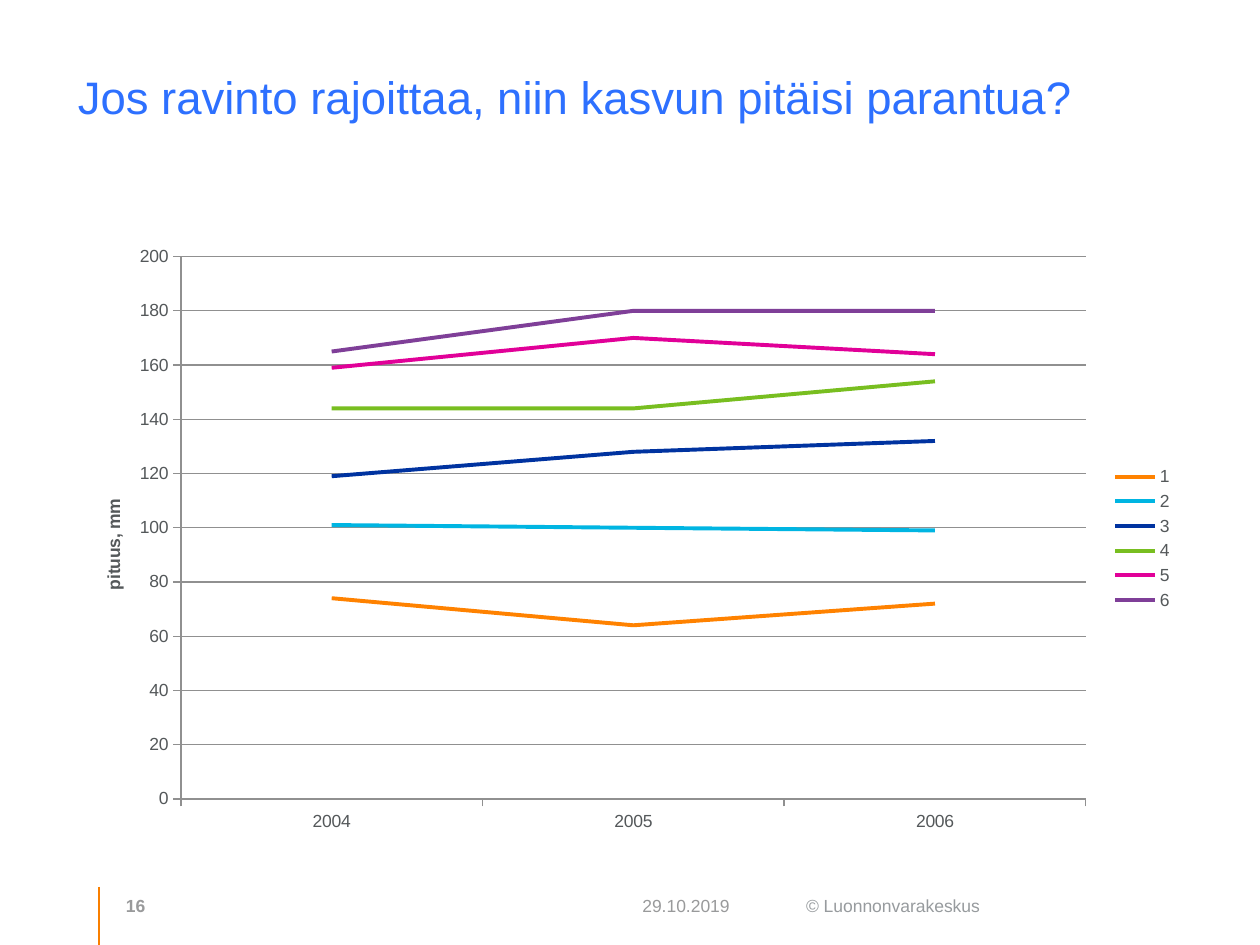
from lxml.etree import SubElement as Sub
from pptx import Presentation
from pptx.chart.data import CategoryChartData as ChartData
from pptx.dml.color import RGBColor as RGB
from pptx.enum.chart import XL_CHART_TYPE as Kind, XL_LEGEND_POSITION as Side
from pptx.enum.chart import XL_TICK_MARK as Tick
from pptx.enum.shapes import MSO_CONNECTOR as Conn
from pptx.enum.text import MSO_ANCHOR as Anchor
from pptx.oxml import parse_xml
from pptx.oxml.ns import nsdecls, qn
from pptx.util import Cm, Pt

BLUE = RGB(0x2D, 0x70, 0xFF)
ORANGE = RGB(0xF9, 0x7F, 0x00)
GREY = RGB(0x99, 0x9A, 0x9B)
PALE = RGB(0x97, 0x9B, 0x9E)
DARK = RGB(0x54, 0x58, 0x5A)
RULE = RGB(0x90, 0x90, 0x90)

# Content: text, box in cm, top inset in cm, anchor, font
TEXTS = [
    ("Jos ravinto rajoittaa, niin kasvun pitäisi parantua?",
     (1.32, 1.19, 22.58, 2.9), 0.2, Anchor.TOP, dict(size=Pt(26), color=BLUE)),
    ("16", (2.29, 17.83, 1.24, 0.76), 0.13, Anchor.BOTTOM,
     dict(size=Pt(10), color=GREY, bold=True)),
    ("29.10.2019", (12.7, 17.83, 3.12, 0.76), 0.13, Anchor.BOTTOM,
     dict(size=Pt(10), color=GREY)),
    ("© Luonnonvarakeskus", (16, 17.91, 4.93, 0.69), 0.13, Anchor.TOP,
     dict(size=Pt(10), color=PALE)),
]
YEARS = ["2004", "2005", "2006"]
LENGTHS = [
    ("1", (74, 64, 72), RGB(0xFF, 0x82, 0x00)),
    ("2", (101, 100, 99), RGB(0x00, 0xB5, 0xE2)),
    ("3", (119, 128, 132), RGB(0x00, 0x33, 0xA0)),
    ("4", (144, 144, 154), RGB(0x78, 0xBE, 0x20)),
    ("5", (159, 170, 164), RGB(0xE1, 0x00, 0x98)),
    ("6", (165, 180, 180), RGB(0x7F, 0x3F, 0x98)),
]


def style(font, color, **attrs):
    font.name = "Arial"
    font.color.rgb = color
    for name, value in attrs.items():
        setattr(font, name, value)


def stroke(line, color, width):
    line.color.rgb = color
    line.width = Pt(width)


def place(part, index, **spots):
    """Give a chart part a manual layout, in shares of the chart."""
    for old in part.findall(qn("c:layout")):
        part.remove(old)
    layout = parse_xml(f"<c:layout {nsdecls('c')}><c:manualLayout/></c:layout>")
    for tag, value in spots.items():
        Sub(layout[0], qn("c:" + tag)).set("val", str(value))
    part.insert(index, layout)


deck = Presentation()
deck.slide_width, deck.slide_height = Cm(25.4), Cm(19.05)
slide = deck.slides.add_slide(deck.slide_layouts[6])
shapes = slide.shapes

# Title and footer
for text, box, top, anchor, font in TEXTS:
    frame = shapes.add_textbox(*map(Cm, box)).text_frame
    frame.word_wrap = True
    frame.margin_top = Cm(top)
    frame.vertical_anchor = anchor
    run = frame.paragraphs[0].add_run()
    run.text = text
    style(run.font, **font)

mark = shapes.add_connector(Conn.STRAIGHT, Cm(2), Cm(17.88), Cm(2), Cm(19.05))
stroke(mark.line, ORANGE, 1)
Sub(mark._element.spPr, qn("a:effectLst"))

# Line chart
data = ChartData()
data.categories = YEARS
for name, values, _ in LENGTHS:
    data.add_series(name, values)
chart = shapes.add_chart(Kind.LINE, Cm(1.32), Cm(4.72), Cm(22.58), Cm(12.27),
                         data).chart
style(chart.font, DARK, size=Pt(10))
chart.has_title = False
chart.has_legend = True
chart.legend.position = Side.RIGHT
chart.legend.include_in_layout = False
chart.plots[0].vary_by_categories = False
for line, (_, _, color) in zip(chart.plots[0].series, LENGTHS):
    line.smooth = False
    stroke(line.format.line, color, 2.25)

# Axes
years, mm = chart.category_axis, chart.value_axis
for axis in (years, mm):
    axis.major_tick_mark = Tick.OUTSIDE
    axis.minor_tick_mark = Tick.NONE
    stroke(axis.format.line, RULE, 0.75)
mm.minimum_scale, mm.maximum_scale, mm.major_unit = 0, 200, 20
mm.has_major_gridlines = True
stroke(mm.major_gridlines.format.line, RULE, 0.75)
run = mm.axis_title.text_frame.paragraphs[0].add_run()
run.text = "pituus, mm"
style(run.font, DARK, size=Pt(10), bold=True)

place(mm.axis_title._element, 1, xMode="edge", yMode="edge", x=0.03, y=0.43)
place(chart._chartSpace.chart.plotArea, 0, layoutTarget="inner", xMode="edge",
      yMode="edge", x=0.103, y=0.037, w=0.808, h=0.891)

deck.save("out.pptx")
